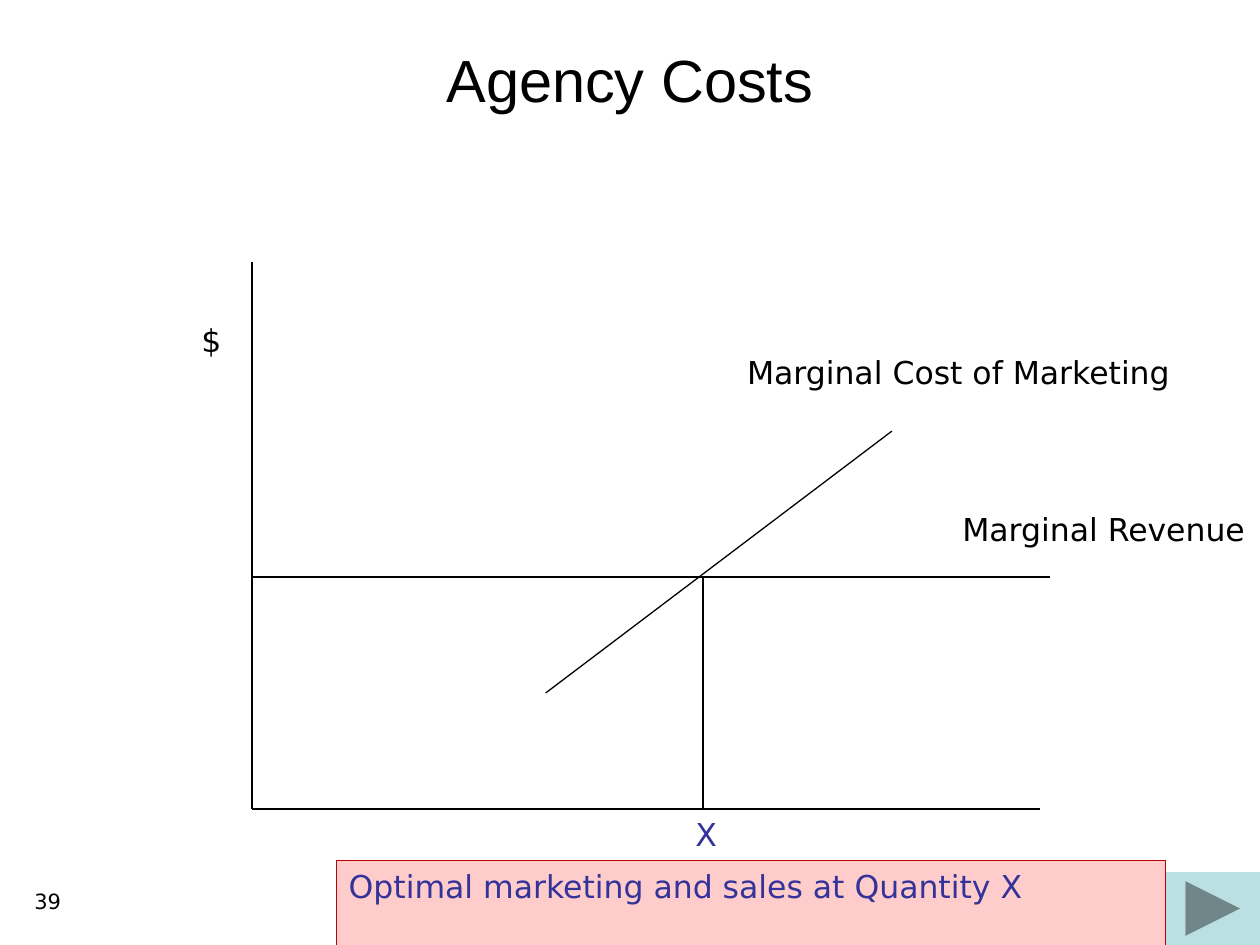
from collections import namedtuple

from lxml.etree import SubElement
from pptx import Presentation
from pptx.dml.color import RGBColor
from pptx.enum.shapes import MSO_CONNECTOR as Connector, MSO_SHAPE as Shape
from pptx.enum.text import MSO_ANCHOR as Anchor, PP_ALIGN as Align
from pptx.oxml.ns import qn
from pptx.util import Cm, Pt

BLACK = RGBColor(0x00, 0x00, 0x00)
INDIGO = RGBColor(0x33, 0x33, 0x99)
PINK = RGBColor(0xFF, 0xCC, 0xCC)
RED = RGBColor(0xC0, 0x00, 0x00)
PALE_TEAL = RGBColor(0xBB, 0xE0, 0xE3)

Box = namedtuple("Box", "left top width height")  # centimetres

TITLE_FONT = {"name": "Arial", "size": Pt(34)}
LABEL_FONT = {"name": "DejaVu Sans", "size": Pt(18)}
NUMBER_FONT = {"name": "DejaVu Sans", "size": Pt(12)}


def write(shape, text, font, color=BLACK, align=Align.LEFT, anchor=Anchor.TOP, wrap=True):
    frame = shape.text_frame
    frame.word_wrap = wrap
    frame.vertical_anchor = anchor
    para = frame.paragraphs[0]
    para.alignment = align
    span = para.add_run()
    span.text = text
    for name, value in font.items():
        setattr(span.font, name, value)
    span.font.color.rgb = color


def add_text(page, box, text, font, **layout):
    write(page.shapes.add_textbox(*map(Cm, box)), text, font, **layout)


def add_filled(page, kind, box, fill):
    shape = page.shapes.add_shape(kind, *map(Cm, box))
    shape.shadow.inherit = False
    shape.fill.solid()
    shape.fill.fore_color.rgb = fill
    shape.line.fill.background()
    return shape


def add_line(page, *ends):
    line = page.shapes.add_connector(Connector.STRAIGHT, *map(Cm, ends))
    line.line.color.rgb = BLACK
    line.line.width = Pt(0.75)
    SubElement(line._element.spPr, qn("a:effectLst"))


def add_cost_diagram(page, box):
    """Draw the axes, both curves, the optimum and their labels; box spans the axes."""
    right, bottom = box.width, box.height
    revenue_y, optimum_x = 6.35, 9.09
    lines = [
        (0, 0, 0, bottom),
        (0, bottom, right, bottom),
        (0, revenue_y, right + 0.2, revenue_y),
        (5.92, 8.69, 12.9, 3.41),
        (optimum_x, revenue_y, optimum_x, bottom),
    ]
    for x1, y1, x2, y2 in lines:
        add_line(page, box.left + x1, box.top + y1, box.left + x2, box.top + y2)

    labels = [
        ("$", -1.27, 1.07, 4.95, BLACK, True),
        ("Marginal Revenue", 14.07, 4.88, 6.25, BLACK, False),
        ("Marginal Cost of Marketing", 9.73, 1.71, 9.17, BLACK, True),
        ("X", optimum_x - 0.4, bottom, 1.37, INDIGO, True),
    ]
    for text, x, y, width, color, wrap in labels:
        place = Box(box.left + x, box.top + y, width, 1.02)
        add_text(page, place, text, LABEL_FONT, color=color, wrap=wrap)


def add_conclusion(page, box):
    panel = add_filled(page, Shape.RECTANGLE, box, PINK)
    panel.line.color.rgb = RED
    panel.line.width = Pt(0.75)
    write(panel, "Optimal marketing and sales at Quantity X", LABEL_FONT, color=INDIGO)


def main():
    deck = Presentation()
    deck.slide_width, deck.slide_height = Cm(25.4), Cm(19.05)
    page = deck.slides.add_slide(deck.slide_layouts[6])

    add_filled(page, Shape.ACTION_BUTTON_FORWARD_OR_NEXT,
               Box(23.5, 17.58, 1.9, 1.47), PALE_TEAL)
    add_text(page, Box(0, 0, 25.4, 3.18), "Agency Costs", TITLE_FONT,
             align=Align.CENTER, anchor=Anchor.MIDDLE)
    add_text(page, Box(0, 17.78, 1.48, 1.27), "39", NUMBER_FONT, align=Align.RIGHT)
    add_cost_diagram(page, Box(5.08, 5.28, 15.88, 11.03))
    add_conclusion(page, Box(6.78, 17.35, 16.71, 1.8))

    deck.save("out.pptx")


if __name__ == "__main__":
    main()
